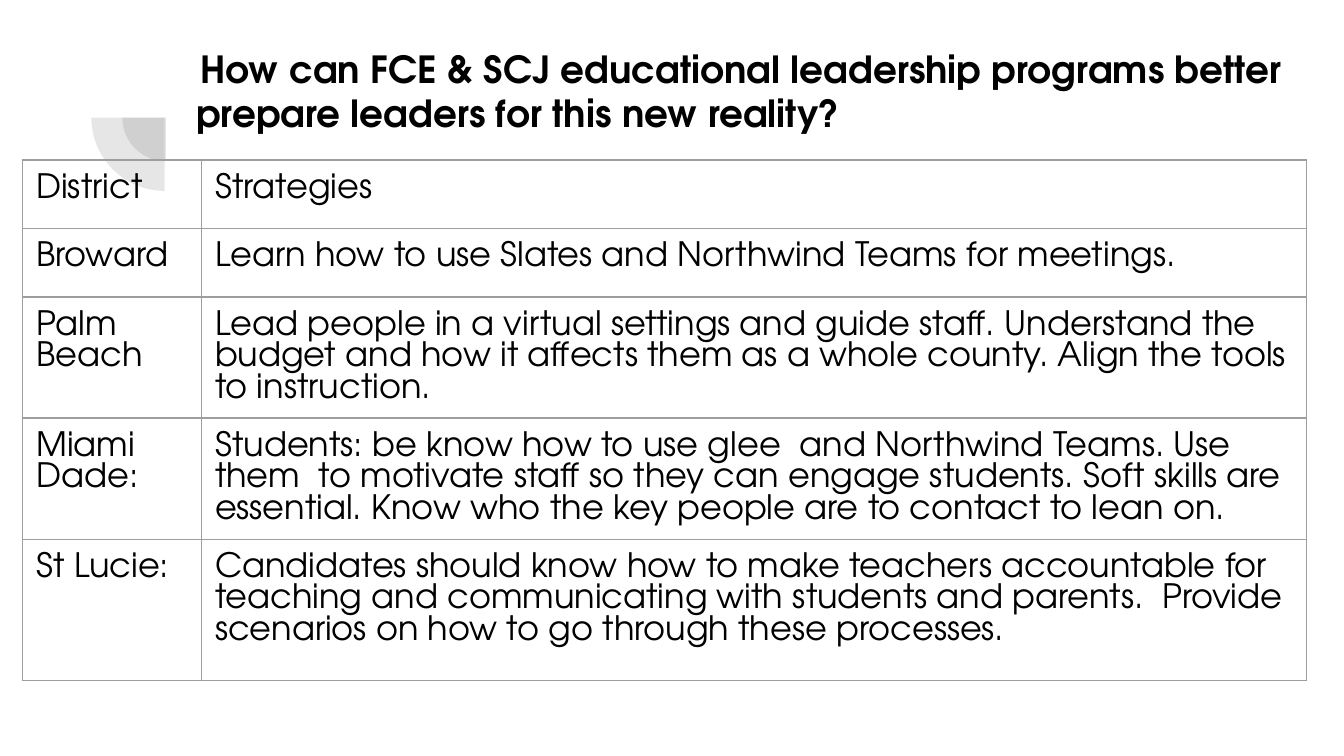
from dataclasses import dataclass

from pptx import Presentation
from pptx.dml.color import RGBColor
from pptx.enum.shapes import MSO_SHAPE
from pptx.enum.text import MSO_ANCHOR, PP_ALIGN
from pptx.oxml.ns import qn
from pptx.util import Inches, Pt
from lxml.etree import SubElement


@dataclass(frozen=True)
class Theme:
    font: str = "TeX Gyre Adventor"
    ink: str = "000000"
    grey: str = "424242"
    rule: str = "9E9E9E"
    head: int = 20
    body: int = 18
    inset: float = 0.1


@dataclass(frozen=True)
class Pie:
    left: float
    top: float
    size: float


@dataclass(frozen=True)
class Row:
    name: str
    plan: str
    height: float


THEME = Theme()
WIDTH = 10
PIES = [Pie(0.91, 0.55, 0.65), Pie(0.68, 0.33, 1.09)]
COLS = [1.33, 8.22]
ROWS = [
    Row("District", "Strategies", 0.51),
    Row("Broward", "Learn how to use Slates and Northwind Teams for meetings.", 0.51),
    Row("Palm Beach", "Lead people in a virtual settings and guide staff. Understand the "
        "budget and how it affects them as a whole county. Align the tools to instruction.", 0.9),
    Row("Miami Dade:", "Students: be know how to use glee  and Northwind Teams. Use them  to "
        "motivate staff so they can engage students. Soft skills are essential. "
        "Know who the key people are to contact to lean on.", 0.9),
    Row("St Lucie:", "Candidates should know how to make teachers accountable for teaching and "
        "communicating with students and parents.  Provide scenarios on how to go through "
        "these processes.", 1.05),
]


def write(frame, text: str, *, size: int, bold: bool = False, indent: float = 0) -> None:
    """Put one formatted, left-aligned paragraph in a text frame."""
    para = frame.paragraphs[0]
    para.alignment = PP_ALIGN.LEFT
    para.line_spacing = 1.0
    para.space_before = Pt(0)
    if indent:
        para._p.get_or_add_pPr().set("indent", str(Inches(indent)))
    run = para.add_run()
    run.text = text
    run.font.name = THEME.font
    run.font.size = Pt(size)
    run.font.bold = bold
    run.font.color.rgb = RGBColor.from_string(THEME.ink)


def pad(box) -> None:
    """Give a cell or text frame equal margins."""
    for side in ("left", "top", "right", "bottom"):
        setattr(box, f"margin_{side}", Inches(THEME.inset))


def draw_pie(slide, pie: Pie) -> None:
    shape = slide.shapes.add_shape(MSO_SHAPE.PIE, Inches(pie.left), Inches(pie.top),
                                   Inches(pie.size), Inches(pie.size))
    shape.adjustments[0], shape.adjustments[1] = 108, 162
    shape.rotation = 270
    shape.shadow.inherit = False
    shape.line.fill.background()
    shape.fill.solid()
    shape.fill.fore_color.rgb = RGBColor.from_string(THEME.grey)
    color = shape.fill._xPr.find(qn("a:solidFill"))[0]
    SubElement(color, qn("a:alpha")).set("val", "13000")


def edge(cell) -> None:
    """Rule all four sides; borders must come before the fill."""
    props = cell._tc.get_or_add_tcPr()
    for place, tag in enumerate(("a:lnL", "a:lnR", "a:lnT", "a:lnB")):
        line = SubElement(props, qn(tag), w=str(Pt(0.75)))
        fill = SubElement(line, qn("a:solidFill"))
        SubElement(fill, qn("a:srgbClr"), val=THEME.rule)
        props.insert(place, line)


def draw_table(slide, rows: list[Row]) -> None:
    height = sum(row.height for row in rows)
    table = slide.shapes.add_table(len(rows), len(COLS), Inches(0.17), Inches(1.19),
                                   Inches(sum(COLS)), Inches(height)).table
    table.first_row = table.horz_banding = False
    for col, width in zip(table.columns, COLS):
        col.width = Inches(width)
    for line, row in zip(table.rows, rows):
        line.height = Inches(row.height)
        for cell, text in zip(line.cells, (row.name, row.plan)):
            pad(cell)
            cell.fill.background()
            edge(cell)
            write(cell.text_frame, text, size=THEME.body)


def main() -> None:
    # Widescreen page, 16 to 9
    deck = Presentation()
    deck.slide_width, deck.slide_height = Inches(WIDTH), Inches(WIDTH * 9 / 16)
    slide = deck.slides.add_slide(deck.slide_layouts[5])

    # Corner ornament
    for pie in PIES:
        draw_pie(slide, pie)

    # Title
    title = slide.shapes.title
    title.left, title.top = Inches(1.36), Inches(0.24)
    title.width, title.height = Inches(8.29), Inches(0.83)
    frame = title.text_frame
    frame.word_wrap = True
    frame.vertical_anchor = MSO_ANCHOR.TOP
    pad(frame)
    write(frame, "How can FCE & SCJ educational leadership programs better prepare leaders "
          "for this new reality?", size=THEME.head, bold=True, indent=0.03)

    # Districts and their strategies
    draw_table(slide, ROWS)
    deck.save("out.pptx")


if __name__ == "__main__":
    main()
